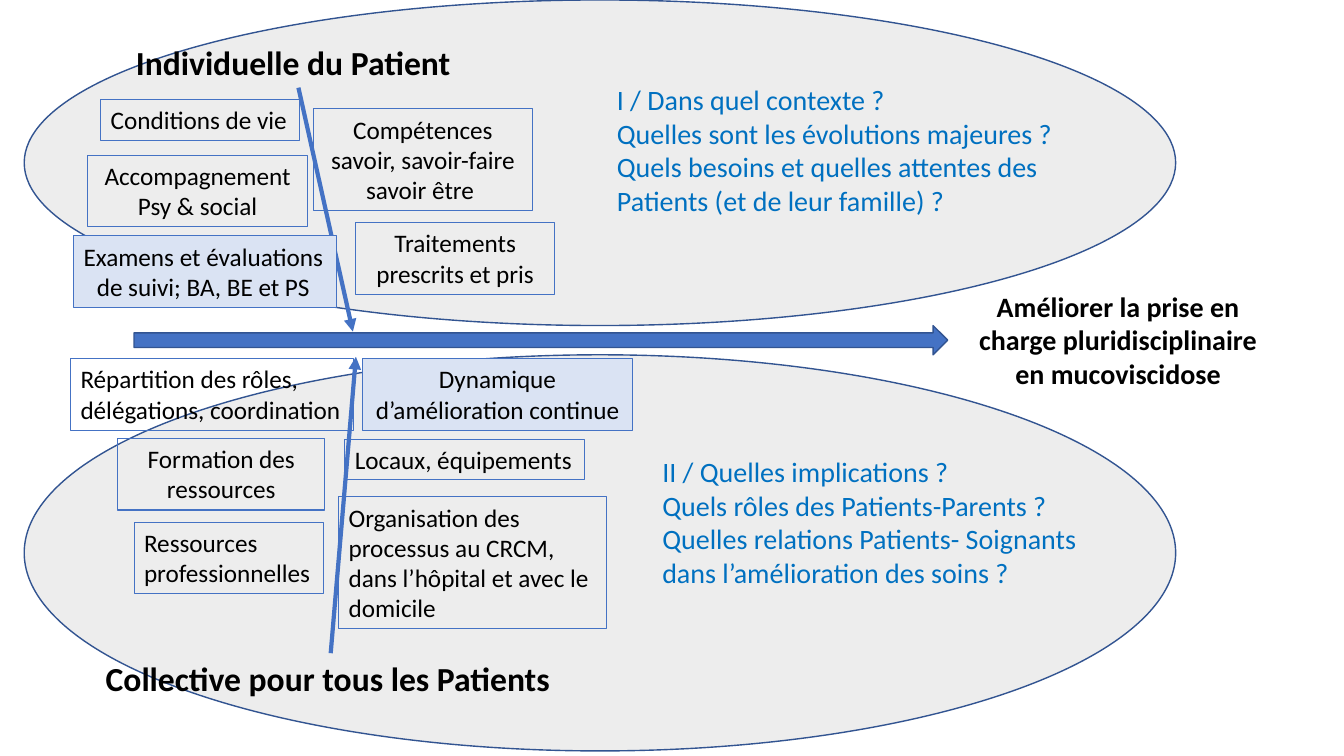
from lxml.etree import SubElement
from pptx import Presentation
from pptx.dml.color import RGBColor
from pptx.enum.shapes import MSO_CONNECTOR, MSO_SHAPE
from pptx.enum.text import MSO_ANCHOR, PP_ALIGN
from pptx.oxml.ns import qn
from pptx.util import Pt

SCALE = 9144
FONT = "Calibri"
COLORS = {"white": "FFFFFF", "black": "000000", "gray": "EDEDED", "navy": "325491",
          "blue": "4472C4", "pale": "DAE3F3", "query": "0070C0"}
ALIGN = {"l": PP_ALIGN.LEFT, "c": PP_ALIGN.CENTER}

BOXES = [
    ((311, 108, 217, 101), ["Compétences", "savoir, savoir-faire savoir être "], "cc", True, None),
    ((87, 154, 218, 71), ["Accompagnement Psy & social"], "c", True, None),
    ((73, 234, 261, 71), ["Examens et évaluations", "de suivi; BA, BE et PS"], "lc", False, "pale"),
    ((353, 221, 197, 71), ["Traitements prescrits et pris"], "c", True, None),
    ((100, 99, 197, 40), ["Conditions de vie"], "l", False, None),
    ((133, 518, 188, 71), ["Ressources professionnelles"], "l", True, None),
    ((117, 435, 205, 71), ["Formation des ressources"], "c", True, None),
    ((70, 356, 281, 71), ["Répartition des rôles,", "délégations, coordination"], "ll", False, None),
    ((336, 493, 266, 131),
     ["Organisation des processus au CRCM, dans l’hôpital et avec le domicile"], "l", True, None),
    ((342, 436, 238, 40), ["Locaux, équipements"], "l", False, None),
    ((360, 356, 267, 71), ["Dynamique d’amélioration continue"], "c", True, "pale"),
]
TITLES = [
    ((125, 37, 343, 50), "Individuelle du Patient"),
    ((95, 648, 466, 50), "Collective pour tous les Patients"),
]
QUERIES = [
    ((602, 77, 462, 145), ["I / Dans quel contexte ?", "Quelles sont les évolutions majeures ?",
                           "Quels besoins et quelles attentes des Patients (et de leur famille) ?"]),
    ((647, 446, 462, 145), ["II / Quelles implications ?", "Quels rôles des Patients-Parents ?",
                            "Quelles relations Patients- Soignants dans l’amélioration des soins ?"]),
]


def px(*nums):
    """Turn px lengths into EMU."""
    return [num * SCALE for num in nums]


def color(name):
    """Look up a named colour."""
    return RGBColor.from_string(COLORS[name])


def paint(shape, fill, line, width):
    """Set the fill, if any, and the outline of a shape."""
    if fill:
        shape.fill.solid()
        shape.fill.fore_color.rgb = color(fill)
    shape.line.color.rgb = color(line)
    shape.line.width = Pt(width)


def add_form(slide, kind, place, fill):
    """Add a filled preset shape with a navy outline."""
    shape = slide.shapes.add_shape(kind, *px(*place))
    shape.shadow.inherit = False
    paint(shape, fill, "navy", 1)
    return shape


def add_text(slide, place, lines, size, align="l", wrap=True, tone="black", bold=False):
    """Add a text box with one paragraph per line, each with its alignment."""
    box = slide.shapes.add_textbox(*px(*place))
    frame = box.text_frame
    frame.word_wrap = wrap
    frame.vertical_anchor = MSO_ANCHOR.TOP
    frame.text = "\n".join(lines)
    for index, par in enumerate(frame.paragraphs):
        par.alignment = ALIGN[align[index % len(align)]]
        par.font.name = FONT
        par.font.size = Pt(size)
        par.font.bold = bold
        par.font.color.rgb = color(tone)
    return box


def add_arrow(slide, start, end):
    """Add a thick line with a triangle at its end."""
    arrow = slide.shapes.add_connector(MSO_CONNECTOR.STRAIGHT, *px(*start, *end))
    arrow.line.color.rgb = color("blue")
    arrow.line.width = Pt(3)
    SubElement(arrow.line._get_or_add_ln(), qn("a:tailEnd"), type="triangle")
    SubElement(arrow._element.spPr, qn("a:effectLst"))


def main():
    """Build the slide and save it."""
    deck = Presentation()
    deck.slide_width, deck.slide_height = px(1333, 750)
    slide = deck.slides.add_slide(deck.slide_layouts[6])
    for place in ((24, 352, 1142, 393), (24, 0, 1142, 323)):
        add_form(slide, MSO_SHAPE.OVAL, place, "gray")
    add_text(slide, (956, 282, 306, 111),
             ["Améliorer la prise en charge pluridisciplinaire", "en mucoviscidose"],
             20, "c", bold=True)
    for place, title in TITLES:
        add_text(slide, place, [title], 24, wrap=False, bold=True)
    add_form(slide, MSO_SHAPE.RIGHT_ARROW, (133, 323, 807, 29), "blue")
    add_arrow(slide, (296, 87), (350, 329))
    add_arrow(slide, (328, 648), (353, 354))
    for place, lines, align, wrap, fill in BOXES:
        box = add_text(slide, place, lines, 18, align, wrap)
        paint(box, fill, "blue", 0.75)
    for place, lines in QUERIES:
        add_text(slide, place, lines, 20, tone="query")
    deck.save("out.pptx")


if __name__ == "__main__":
    main()
